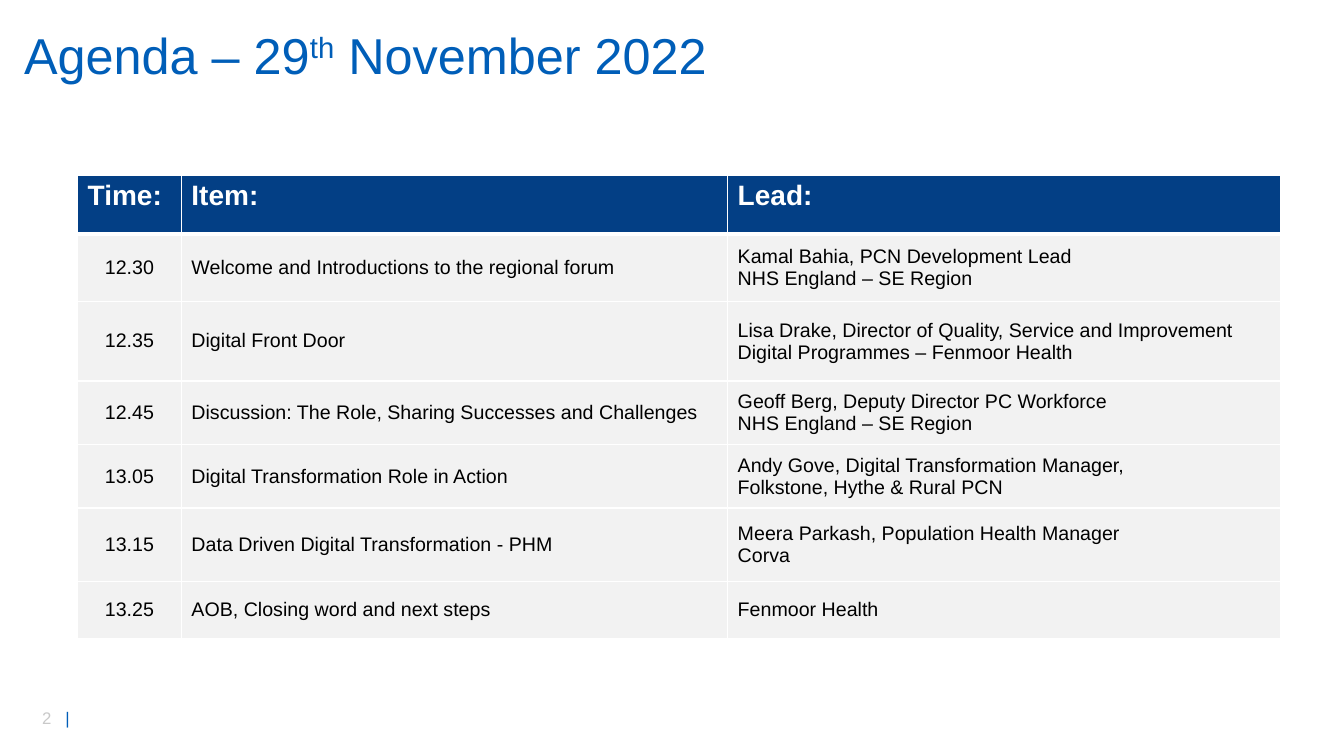
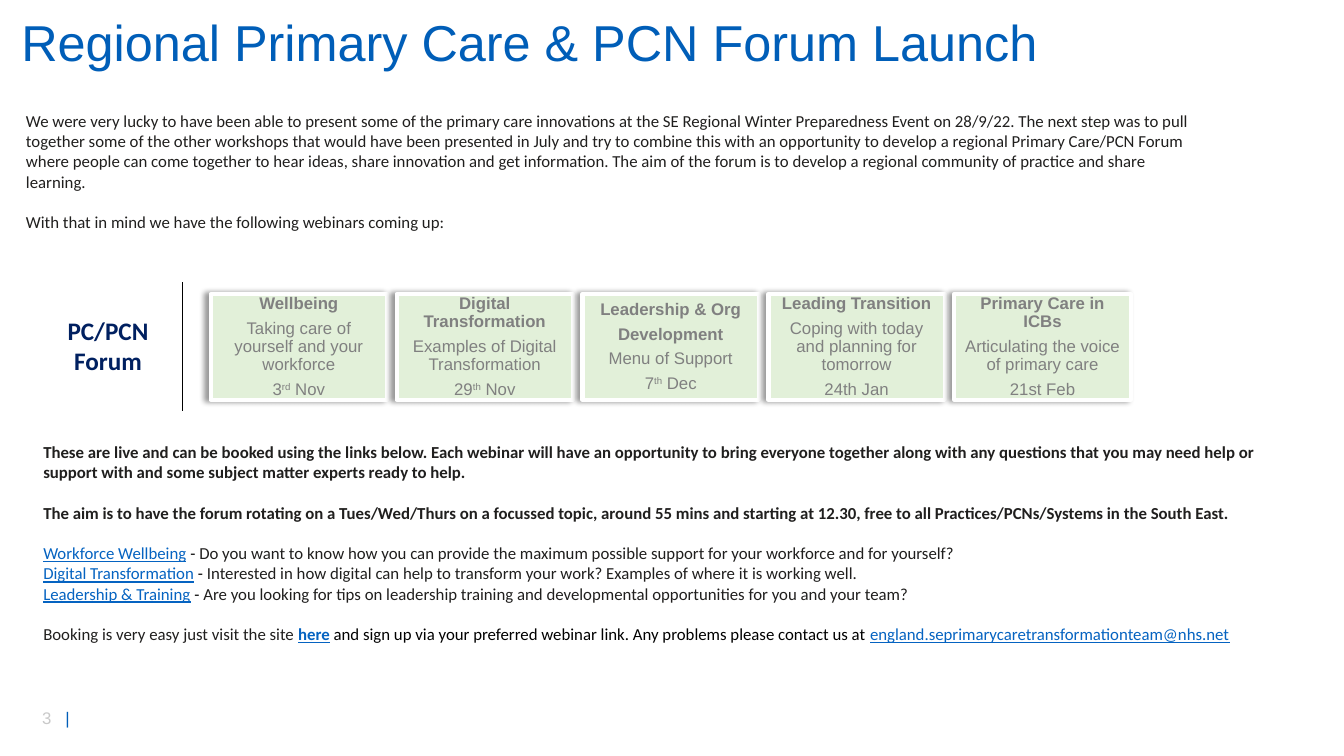
from dataclasses import dataclass

import pptx
import pptx.dml.color
import pptx.enum.shapes
import pptx.enum.text
import pptx.oxml
import pptx.oxml.ns
import pptx.util
from pptx.util import Pt

ALIGN = pptx.enum.text.PP_ALIGN
ANCHOR = pptx.enum.text.MSO_ANCHOR

BLUE, NAVY, HEADER_BLUE, LINK = "005EB8", "002060", "033F85", "0563C1"
WHITE, BLACK, INK = "FFFFFF", "000000", "201F1E"
PALE_GREY, MID_GREY, TEXT_GREY, GREEN = "F2F2F2", "C9C9C9", "808080", "E2F0D9"
BLANK_LINE = 14.65  # one line of 12 pt Calibri


@dataclass(frozen=True)
class Style:
    size: float
    font: str = "Arial"
    color: str = BLACK
    bold: bool = False


@dataclass(frozen=True)
class Run:
    text: str
    color: str | None = None
    bold: bool | None = None
    underline: bool = False
    superscript: bool = False


@dataclass(frozen=True)
class Para:
    runs: tuple[Run, ...]
    before: float = 0


@dataclass(frozen=True)
class Card:
    heading: tuple[str, ...]
    detail: str
    date: tuple[Run, ...]


@dataclass(frozen=True)
class AgendaRow:
    height: float
    time: str
    item: str
    lead: tuple[str, ...]


TITLE = Style(36, color=BLUE)
FOOTER = Style(12, color=MID_GREY)
TABLE_HEAD = Style(20, color=WHITE, bold=True)
TABLE_BODY = Style(14)
BODY = Style(12, "Calibri", INK)
CARD_TEXT = Style(12, color=TEXT_GREY)
FORUM_LABEL = Style(18, "Calibri", NAVY, True)


def para(*runs: str | Run, before: float = 0) -> Para:
    return Para(tuple(Run(r) if isinstance(r, str) else r for r in runs), before)


def sup(text: str) -> Run:
    return Run(text, superscript=True)


def link(text: str, bold: bool = False) -> Run:
    return Run(text, LINK, bold, underline=True)


def rgb(color: str) -> pptx.dml.color.RGBColor:
    return pptx.dml.color.RGBColor.from_string(color)


def write(tf, paras: list[Para], style: Style, align=ALIGN.LEFT,
          spacing: float = 1.0, after: float = 0) -> None:
    for i, para_spec in enumerate(paras):
        p = tf.paragraphs[0] if i == 0 else tf.add_paragraph()
        p.alignment = align
        p.line_spacing = spacing
        p.space_before = Pt(para_spec.before)
        p.space_after = Pt(after)
        for run in para_spec.runs:
            r = p.add_run()
            r.text = run.text
            r.font.name = style.font
            r.font.size = Pt(style.size)
            r.font.bold = style.bold if run.bold is None else run.bold
            r.font.underline = run.underline
            r.font.color.rgb = rgb(run.color or style.color)
            if run.superscript:
                r.font._element.set("baseline", "30000")


def add_text(s, left: float, top: float, width: float, height: float,
             paras: list[Para], style: Style):
    sp = s.shapes.add_textbox(Pt(left), Pt(top), Pt(width), Pt(height))
    sp.text_frame.word_wrap = True
    write(sp.text_frame, paras, style)
    return sp


def add_slide(prs, number: int, title: Para, left: float, top: float, width: float):
    """Add a slide with its title and the page number with a bar."""
    s = prs.slides.add_slide(prs.slide_layouts[5])
    sp = s.shapes.title
    sp.left, sp.top, sp.width, sp.height = Pt(left), Pt(top), Pt(width), Pt(48)
    tf = sp.text_frame
    tf.word_wrap = True
    tf.auto_size = pptx.enum.text.MSO_AUTO_SIZE.NONE
    tf.vertical_anchor = ANCHOR.MIDDLE
    write(tf, [title], TITLE, spacing=0.9)

    footer = add_text(s, 23, 502, 51, 21.6, [], FOOTER)
    ns = pptx.oxml.ns.nsdecls("a")
    tabs = pptx.oxml.parse_xml(
        f'<a:tabLst {ns}><a:tab pos="{Pt(16.7)}" algn="l"/></a:tabLst>')
    footer.text_frame.paragraphs[0]._p.get_or_add_pPr().append(tabs)
    write(footer.text_frame, [para(f"{number}\t", Run("|", BLUE))], FOOTER)
    return s


def set_borders(cell, **widths_and_colors: tuple[float, str]) -> None:
    """Draw the L, R, T and B sides; a side that is not given has no line."""
    ns = pptx.oxml.ns.nsdecls("a")
    for side in "LRTB":
        width, color = widths_and_colors.get(side, (0, ""))
        fill = (f'<a:solidFill><a:srgbClr val="{color}"/></a:solidFill>'
                if color else "<a:noFill/>")
        cell._tc.get_or_add_tcPr().append(pptx.oxml.parse_xml(
            f'<a:ln{side} {ns} w="{Pt(width)}">{fill}</a:ln{side}>'))


def add_table(s, left: float, top: float, cols: list[float], rows: list[float]):
    table = s.shapes.add_table(len(rows), len(cols), Pt(left), Pt(top),
                               Pt(sum(cols)), Pt(sum(rows))).table
    table.horz_banding = False
    for column, width in zip(table.columns, cols):
        column.width = Pt(width)
    for row, height in zip(table.rows, rows):
        row.height = Pt(height)
    return table


def add_agenda(s, rows: list[AgendaRow]) -> None:
    table = add_table(s, 55.4, 125.3, [74.2, 390.2, 395.3],
                      [41.8] + [row.height for row in rows])
    contents = [[("Time:",), ("Item:",), ("Lead:",)]]
    contents += [[(row.time,), (row.item,), row.lead] for row in rows]
    thin, thick = (1, WHITE), (3, WHITE)
    for i, row_texts in enumerate(contents):
        head = i == 0
        for j, lines in enumerate(row_texts):
            cell = table.cell(i, j)
            set_borders(cell, L=thin, R=thin, T=thick if i == 1 else thin,
                        B=thick if head else thin)
            cell.fill.solid()
            cell.fill.fore_color.rgb = rgb(HEADER_BLUE if head else PALE_GREY)
            cell.vertical_anchor = ANCHOR.TOP if head else ANCHOR.MIDDLE
            centred = j == 0 and not head
            write(cell.text_frame, [para(line) for line in lines],
                  TABLE_HEAD if head else TABLE_BODY,
                  ALIGN.CENTER if centred else ALIGN.LEFT)


def add_forum_label(s) -> None:
    """Add the two-cell table whose divider sets the label off from the cards."""
    table = add_table(s, 23.8, 201.6, [106.6, 743.8], [92.2])
    table.first_row = False
    label, cards = table.cell(0, 0), table.cell(0, 1)
    set_borders(label, R=(1, BLACK))
    set_borders(cards, L=(1, BLACK))
    for cell in (label, cards):
        cell.fill.background()
    label.vertical_anchor = ANCHOR.MIDDLE
    write(label.text_frame, [para("PC/PCN"), para("Forum")], FORUM_LABEL, ALIGN.CENTER)


def add_shadow(sp) -> None:
    sp.shadow.inherit = False
    effects = sp._element.spPr.find(pptx.oxml.ns.qn("a:effectLst"))
    effects.append(pptx.oxml.parse_xml(
        f'<a:outerShdw {pptx.oxml.ns.nsdecls("a")} blurRad="{Pt(4)}" dist="{Pt(3)}" '
        'dir="10800000" algn="r" rotWithShape="0"><a:srgbClr val="000000">'
        '<a:alpha val="40000"/></a:srgbClr></a:outerShdw>'))


def add_card(s, left: float, card: Card) -> None:
    sp = s.shapes.add_shape(pptx.enum.shapes.MSO_SHAPE.RECTANGLE,
                            Pt(left), Pt(210), Pt(126), Pt(75.6))
    sp.fill.solid()
    sp.fill.fore_color.rgb = rgb(GREEN)
    sp.line.color.rgb = rgb(WHITE)
    sp.line.width = Pt(3)
    add_shadow(sp)
    tf = sp.text_frame
    tf.word_wrap = True
    tf.vertical_anchor = ANCHOR.MIDDLE
    tf.margin_left = tf.margin_right = tf.margin_top = tf.margin_bottom = Pt(4.3)
    paras = [para(Run(line, bold=True)) for line in card.heading]
    paras += [para(card.detail), para(*card.date)]
    write(tf, paras, CARD_TEXT, ALIGN.CENTER, spacing=0.9, after=4.7)


AGENDA = [
    AgendaRow(48.2, "12.30", "Welcome and Introductions to the regional forum",
              ("Kamal Bahia, PCN Development Lead", "NHS England – SE Region")),
    AgendaRow(56.9, "12.35", "Digital Front Door",
              ("Lisa Drake, Director of Quality, Service and Improvement "
               "Digital Programmes – Fenmoor Health",)),
    AgendaRow(45.4, "12.45", "Discussion: The Role, Sharing Successes and Challenges",
              ("Geoff Berg, Deputy Director PC Workforce", "NHS England – SE Region")),
    AgendaRow(45.4, "13.05", "Digital Transformation Role in Action",
              ("Andy Gove, Digital Transformation Manager,",
               "Folkstone, Hythe & Rural PCN")),
    AgendaRow(52.6, "13.15", "Data Driven Digital Transformation - PHM",
              ("Meera Parkash, Population Health Manager", "Corva")),
    AgendaRow(40.3, "13.25", "AOB, Closing word and next steps", ("Fenmoor Health",)),
]

CARDS = [
    Card(("Wellbeing",), "Taking care of yourself and your workforce",
         (Run("3"), sup("rd"), Run(" Nov"))),
    Card(("Digital Transformation",), "Examples of Digital Transformation",
         (Run("29"), sup("th"), Run(" Nov"))),
    Card(("Leadership & Org", "Development"), "Menu of Support",
         (Run("7"), sup("th"), Run(" Dec"))),
    Card(("Leading Transition",), "Coping with today and planning for tomorrow",
         (Run("24th Jan"),)),
    Card(("Primary Care in ICBs",), "Articulating the voice of primary care",
         (Run("21st Feb"),)),
]

INTRO = [
    para("We were very lucky to have been able to present some of the primary care "
         "innovations at the SE Regional Winter Preparedness Event on 28/9/22. The next "
         "step was to pull together some of the other workshops that would have been "
         "presented in July and try to combine this with an opportunity to develop a "
         "regional Primary Care/PCN Forum where people can come together to hear ideas, "
         "share innovation and get information. The aim of the forum is to develop a "
         "regional community of practice and share learning."),
    para("With that in mind we have the following webinars coming up:", before=BLANK_LINE),
]

BOOKING = [
    para(Run("These are live and can be booked using the links below. Each webinar will "
             "have an opportunity to bring everyone together along with any questions "
             "that you may need help or support with and some subject matter experts "
             "ready to help.", bold=True)),
    para(Run("The aim is to have the forum rotating on a Tues/Wed/Thurs on a focussed "
             "topic, around 55 mins and starting at 12.30, free to all "
             "Practices/PCNs/Systems in the South East.", bold=True), before=BLANK_LINE),
    para(link("Workforce Wellbeing"), Run(" - ", BLACK),
         "Do you want to know how you can provide the maximum possible support for your "
         "workforce and for yourself?", before=BLANK_LINE),
    para(link("Digital Transformation"), Run(" - ", BLACK),
         "Interested in how digital can help to transform your work? Examples of where "
         "it is working well."),
    para(link("Leadership & Training"), Run(" - ", BLACK),
         "Are you looking for tips on leadership training and developmental "
         "opportunities for you and your team?"),
    para("Booking is very easy just visit the site ", link("here", bold=True),
         Run(" and sign up via your preferred webinar link. Any problems please contact "
             "us at ", BLACK),
         link("england.seprimarycaretransformationteam@nhs.net"), before=BLANK_LINE),
]


def main() -> None:
    prs = pptx.Presentation()
    prs.slide_width, prs.slide_height = Pt(960), Pt(540)

    s = add_slide(prs, 2, para("Agenda – 29", sup("th"), " November 2022"), 10, 17.3, 838)
    add_agenda(s, AGENDA)

    s = add_slide(prs, 3, para("Regional Primary Care & PCN Forum Launch"), 8, 8.6, 811)
    add_text(s, 11.5, 75.6, 850, 102, INTRO, BODY)
    add_text(s, 23.8, 311.8, 901.4, 152.6, BOOKING, BODY)
    add_forum_label(s)
    for i, card in enumerate(CARDS):
        add_card(s, 150.5 + i * 132.8, card)

    prs.save("out.pptx")


if __name__ == "__main__":
    main()
